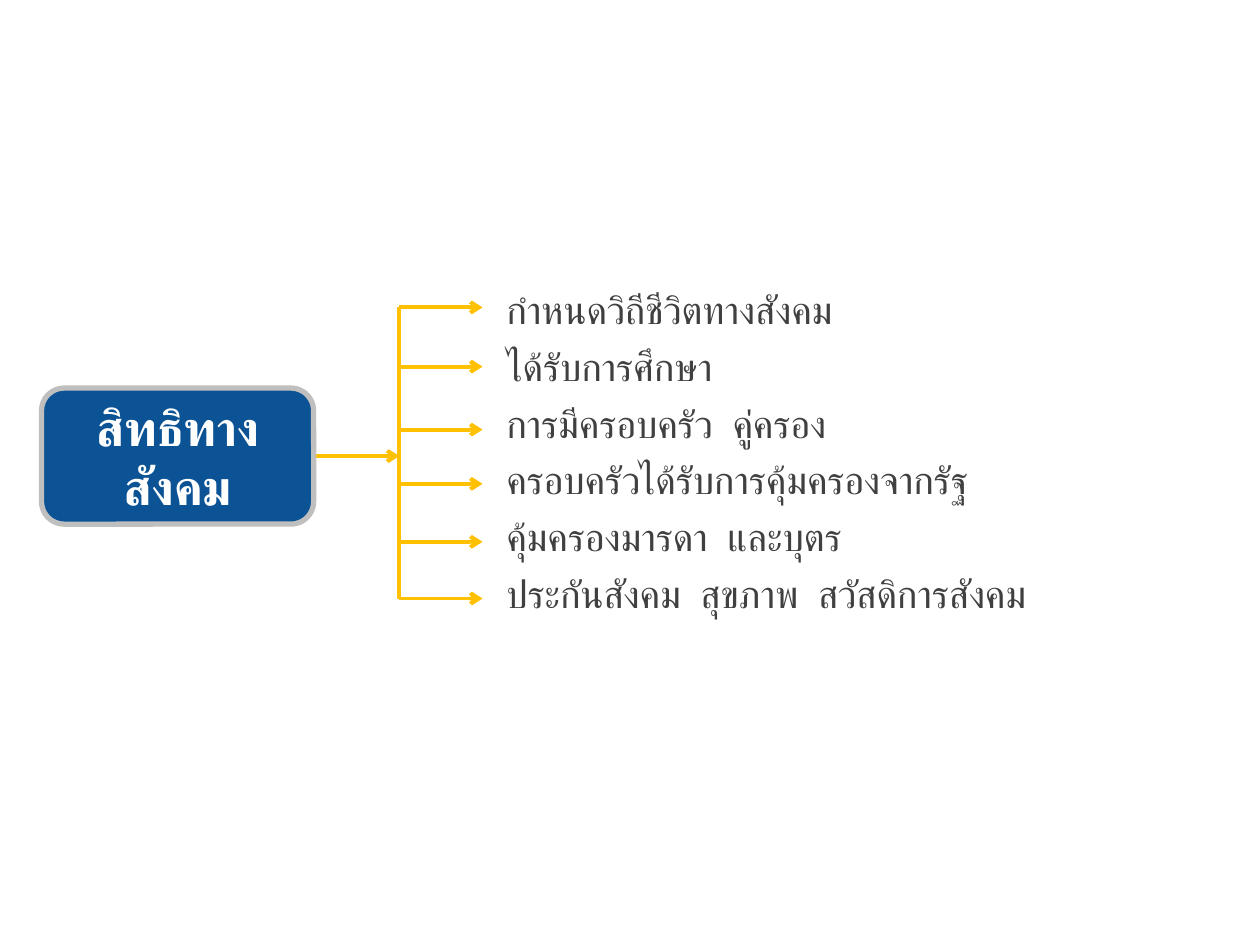
from dataclasses import dataclass

from lxml.etree import SubElement
from pptx import Presentation
from pptx.dml.color import RGBColor
from pptx.enum.shapes import MSO_CONNECTOR, MSO_SHAPE
from pptx.enum.text import MSO_ANCHOR, PP_ALIGN
from pptx.oxml.ns import qn
from pptx.util import Inches, Pt

TOPIC = "สิทธิทางสังคม"
RIGHTS = [
    ("กำหนดวิถีชีวิตทางสังคม", 2.44),
    ("ได้รับการศึกษา", 2.91),
    ("การมีครอบครัว  คู่ครอง", 3.41),
    ("ครอบครัวได้รับการคุ้มครองจากรัฐ", 3.84),
    ("คุ้มครองมารดา  และบุตร", 4.3),
    ("ประกันสังคม  สุขภาพ  สวัสดิการสังคม", 4.75),
]
TOPIC_BOX = (0.33, 3.08, 2.16, 1.08)
LIST_BOX = (3.92, 0.33, 5.08, 6.5)
TRUNK_X, ARROW_END_X = 3.17, 3.83


@dataclass(frozen=True)
class Theme:
    font: str = "Lato"
    text: str = "404040"
    white: str = "FFFFFF"
    topic_fill: str = "0B5394"
    topic_border: str = "BFBFBF"
    branch: str = "FFC000"
    topic_size: float = 28
    list_size: float = 22
    list_gap: float = 6
    topic_border_width: float = 3
    branch_width: float = 2.25


THEME = Theme()


def color(value):
    return RGBColor.from_string(value)


def format_run(run, size, text_color, bold=False):
    run.font.name = THEME.font
    run.font.size = Pt(size)
    run.font.bold = bold
    run.font.color.rgb = color(text_color)
    SubElement(run.font._element, qn("a:cs"), typeface=THEME.font)


def add_branch(slide, start, end, arrow=True):
    points = [Inches(value) for value in (*start, *end)]
    connector = slide.shapes.add_connector(MSO_CONNECTOR.STRAIGHT, *points)
    connector.line.color.rgb = color(THEME.branch)
    connector.line.width = Pt(THEME.branch_width)
    if arrow:
        SubElement(connector.line._get_or_add_ln(), qn("a:tailEnd"), type="arrow")
    SubElement(connector._element.spPr, qn("a:effectLst"))
    return connector


def add_rights(slide):
    box = slide.shapes.add_textbox(*map(Inches, LIST_BOX))
    box.fill.solid()
    box.fill.fore_color.rgb = color(THEME.white)
    frame = box.text_frame
    frame.word_wrap = True
    frame.vertical_anchor = MSO_ANCHOR.MIDDLE
    frame.text = "\n".join(text for text, _ in RIGHTS)
    for index, paragraph in enumerate(frame.paragraphs):
        if index:
            paragraph.space_before = Pt(THEME.list_gap)
        format_run(paragraph.runs[0], THEME.list_size, THEME.text)


def add_topic(slide):
    shape = slide.shapes.add_shape(MSO_SHAPE.ROUNDED_RECTANGLE, *map(Inches, TOPIC_BOX))
    shape.shadow.inherit = False
    shape.fill.solid()
    shape.fill.fore_color.rgb = color(THEME.topic_fill)
    shape.line.color.rgb = color(THEME.topic_border)
    shape.line.width = Pt(THEME.topic_border_width)
    frame = shape.text_frame
    frame.word_wrap = True
    frame.vertical_anchor = MSO_ANCHOR.MIDDLE
    frame.text = TOPIC
    paragraph = frame.paragraphs[0]
    paragraph.alignment = PP_ALIGN.CENTER
    format_run(paragraph.runs[0], THEME.topic_size, THEME.white, bold=True)
    return shape


def main():
    presentation = Presentation()
    presentation.slide_width = Inches(10)
    presentation.slide_height = Inches(7.5)
    slide = presentation.slides.add_slide(presentation.slide_layouts[6])

    add_rights(slide)
    heights = [y for _, y in RIGHTS]
    add_branch(slide, (TRUNK_X, heights[0]), (TRUNK_X, heights[-1]), arrow=False)
    for y in heights:
        add_branch(slide, (TRUNK_X, y), (ARROW_END_X, y))

    left, top, width, height = TOPIC_BOX
    middle = top + height / 2
    stem = add_branch(slide, (left + width, middle), (TRUNK_X, middle))
    stem.begin_connect(add_topic(slide), 3)

    presentation.save("out.pptx")


if __name__ == "__main__":
    main()
